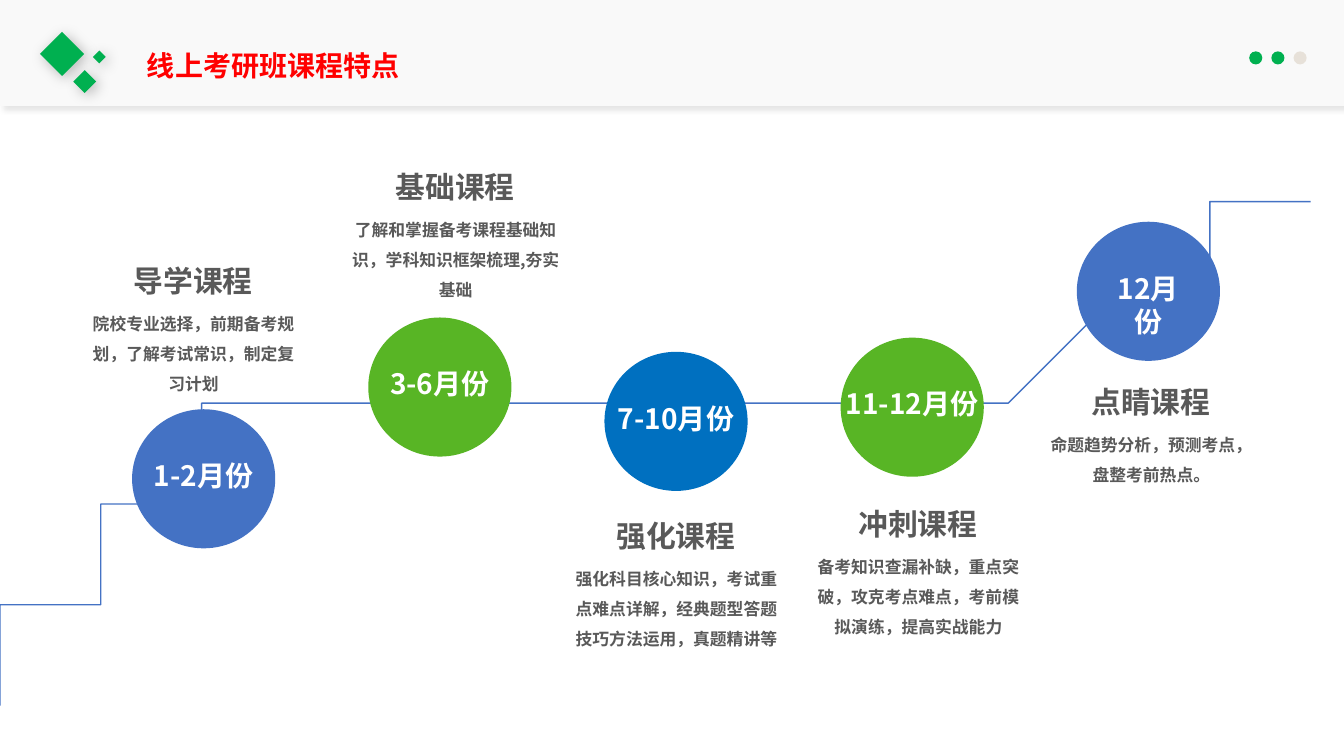
from lxml.etree import SubElement
from pptx import Presentation
from pptx.dml.color import RGBColor
from pptx.enum.shapes import MSO_SHAPE as SHAPE
from pptx.enum.text import MSO_AUTO_SIZE as AUTO, PP_ALIGN as ALIGN
from pptx.oxml.ns import qn
from pptx.util import Inches, Pt

FONT = "Noto Sans CJK SC"
WHITE = RGBColor(0xFF, 0xFF, 0xFF)
HEADER_GREY = RGBColor(0xF9, 0xF9, 0xF9)
TEXT_GREY = RGBColor(0x59, 0x59, 0x59)
RED = RGBColor(0xFF, 0x00, 0x00)
BLUE = RGBColor(0x44, 0x72, 0xC4)
DEEP_BLUE = RGBColor(0x00, 0x70, 0xC0)
LIME = RGBColor(0x58, 0xB5, 0x25)
GREEN = RGBColor(0x00, 0xB0, 0x50)
TAN = RGBColor(0xA3, 0x85, 0x59)

TITLE = "线上考研班课程特点"
# month, colour, circle top, label width, course, description, text left, text top, text height
STAGES = [
    ("1-2月份", BLUE, 4.06, 1.22, "导学课程",
     "院校专业选择，前期备考规划，了解考试常识，制定复习计划", 0.81, 2.43, 0.98),
    ("3-6月份", LIME, 3.15, 1.22, "基础课程",
     "了解和掌握备考课程基础知识，学科知识框架梳理,夯实基础", 3.41, 1.5, 0.98),
    ("7-10月份", DEEP_BLUE, 3.49, 1.37, "强化课程",
     "强化科目核心知识，考试重点难点详解，经典题型答题技巧方法运用，真题精讲等", 5.6, 4.96, 0.98),
    ("11-12月份", LIME, 3.35, 1.53, "冲刺课程",
     "备考知识查漏补缺，重点突破，攻克考点难点，考前模拟演练，提高实战能力", 8, 4.84, 0.98),
    ("12月份", BLUE, 2.2, 1.07, "点睛课程",
     "命题趋势分析，预测考点，盘整考前热点。", 10.31, 3.63, 0.67),
]
DIAMONDS = [(0.46, 0.38, 0.31), (0.76, 0.73, 0.16), (0.94, 0.52, 0.09)]
DOTS = [(GREEN, 100), (GREEN, 100), (TAN, 20)]
CURVE_START = (-0.03, 6.81)
CURVES = [
    ((1.17, 5.48), (2.37, 4.15), (3.79, 3.72)),
    ((5.21, 3.3), (6.91, 4.64), (8.51, 4.28)),
    ((10.1, 3.92), (11.73, 2.73), (13.36, 1.55)),
]
CURVE_STEPS = 30
SLIDE_W, SLIDE_H = 13.33, 7.5
CIRCLE_W, CIRCLE_H = 1.42, 1.38
FIRST_CIRCLE, CIRCLE_STEP = 1.31, 2.3425

prs = Presentation()
prs.slide_width, prs.slide_height = Inches(SLIDE_W), Inches(SLIDE_H)
slide = prs.slides.add_slide(prs.slide_layouts[6])


def add_shape(kind, x, y, w, h, color, alpha=100, shadow=None):
    """Borderless filled shape; shadow is (opacity percent, blur in points)."""
    s = slide.shapes.add_shape(kind, *map(Inches, (x, y, w, h)))
    s.shadow.inherit = False
    s.fill.solid()
    s.fill.fore_color.rgb = color
    s.line.fill.background()
    sp_pr = s.element.spPr
    if alpha < 100:
        clr = sp_pr.find(qn("a:solidFill")).find(qn("a:srgbClr"))
        SubElement(clr, qn("a:alpha"), val=str(alpha * 1000))
    if shadow:
        opacity, blur = shadow
        outer = SubElement(sp_pr.find(qn("a:effectLst")), qn("a:outerShdw"),
                           blurRad=str(Pt(blur)), dist=str(Pt(3)),
                           dir=str(45 * 60000), algn="tl", rotWithShape="0")
        clr = SubElement(outer, qn("a:srgbClr"), val="000000")
        SubElement(clr, qn("a:alpha"), val=str(opacity * 1000))
    return s


def add_text(text, x, y, w, h, size, color, align=ALIGN.CENTER, spacing=1.0, margin_y=0.05):
    box = slide.shapes.add_textbox(*map(Inches, (x, y, w, h)))
    tf = box.text_frame
    tf.word_wrap = True
    tf.auto_size = AUTO.SHAPE_TO_FIT_TEXT
    tf.margin_top = tf.margin_bottom = Inches(margin_y)
    p = tf.paragraphs[0]
    p.alignment, p.line_spacing = align, spacing
    r = p.add_run()
    r.text = text
    r.font.size, r.font.bold, r.font.name = Pt(size), True, FONT
    r.font.color.rgb = color
    SubElement(r.font._element, qn("a:ea"), typeface=FONT)


def bezier(p0, p1, p2, p3, t):
    u = 1 - t
    return tuple(u**3 * a + 3 * u * u * t * b + 3 * u * t * t * c + t**3 * d
                 for a, b, c, d in zip(p0, p1, p2, p3))


def add_timeline():
    points, start = [], CURVE_START
    for curve in CURVES:
        points += [bezier(start, *curve, i / CURVE_STEPS) for i in range(1, CURVE_STEPS + 1)]
        start = curve[-1]
    builder = slide.shapes.build_freeform(*CURVE_START, scale=Inches(1))
    builder.add_line_segments(points, close=False)
    s = builder.convert_to_shape()
    s.shadow.inherit = False
    s.fill.background()
    s.line.color.rgb, s.line.width = BLUE, Pt(1)


add_shape(SHAPE.RECTANGLE, 0, 0, SLIDE_W, 1.05, HEADER_GREY, shadow=(10, 4))
for i, (color, alpha) in enumerate(DOTS):
    add_shape(SHAPE.OVAL, 12.39 + 0.22 * i, 0.51, 0.13, 0.13, color, alpha)
for x, y, side in DIAMONDS:
    diamond = add_shape(SHAPE.ROUNDED_RECTANGLE, x, y, side, side, GREEN, shadow=(25, 10))
    diamond.adjustments[0] = 0
    diamond.rotation = 45
add_text(TITLE, 1.36, 0.37, 3.14, 0.47, 20, RED, align=ALIGN.LEFT, spacing=1.2)

add_timeline()
for i, (month, color, top, label_w, course, about, x, y, h) in enumerate(STAGES):
    left = FIRST_CIRCLE + CIRCLE_STEP * i
    add_shape(SHAPE.OVAL, left, top, CIRCLE_W, CIRCLE_H, color)
    add_text(month, left + (CIRCLE_W - label_w) / 2, top + 0.44, label_w, 0.44, 20, WHITE)
    add_text(course, x, y, 2.21, 0.48, 21.3, TEXT_GREY, spacing=1.5, margin_y=0)
    add_text(about, x - 0.02, y + 0.53, 2.26, h, 12, TEXT_GREY, spacing=1.5)

prs.save("out.pptx")
